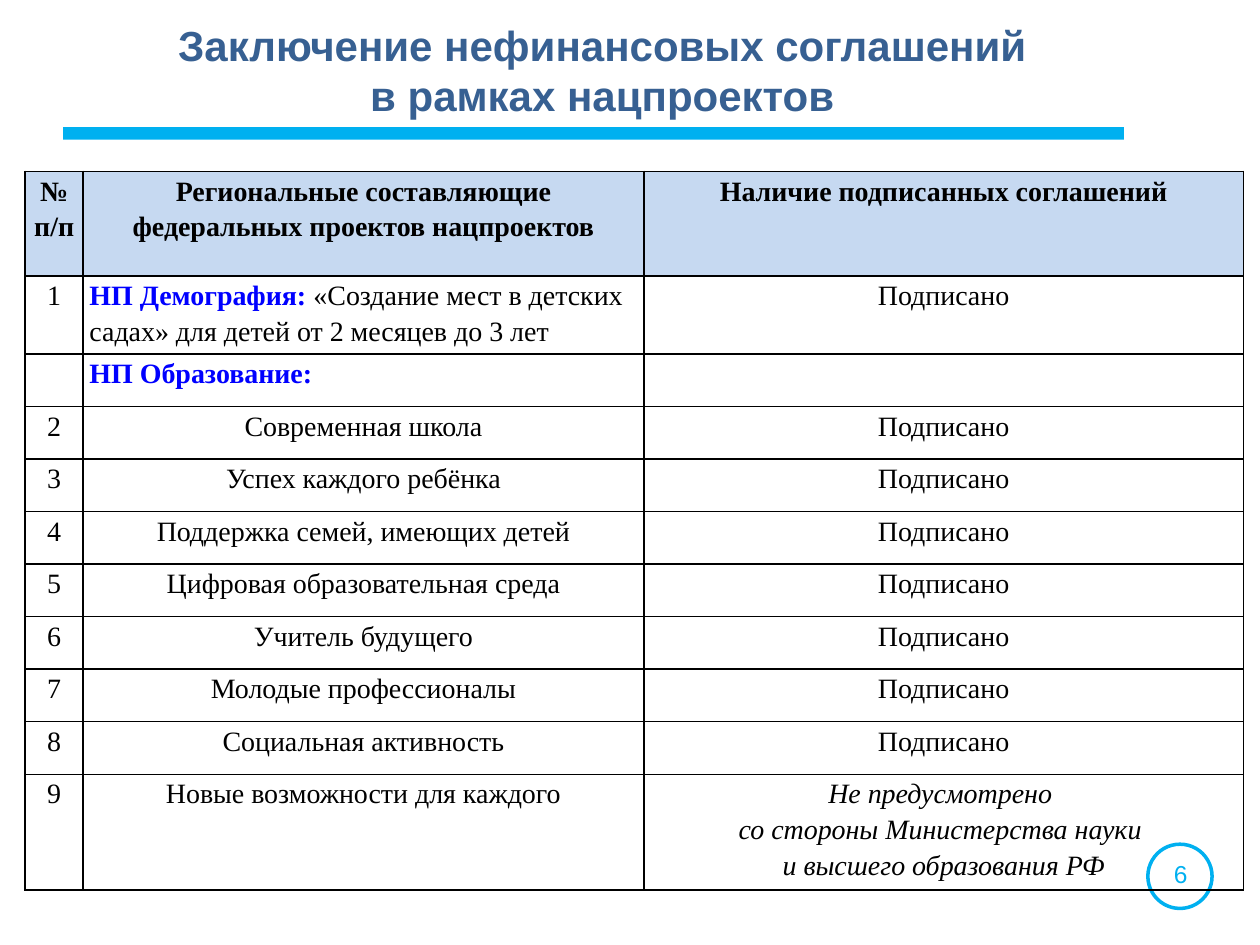
from dataclasses import dataclass
from typing import NamedTuple

from lxml.etree import SubElement
from pptx import Presentation
from pptx.dml.color import RGBColor
from pptx.enum.shapes import MSO_SHAPE
from pptx.enum.text import MSO_ANCHOR, MSO_AUTO_SIZE, PP_ALIGN
from pptx.oxml.ns import qn
from pptx.util import Inches, Pt

GRID_COLUMNS, GRID_ROWS = 100, 75
WIDTH, HEIGHT = Inches(10), Inches(7.5)


@dataclass(frozen=True)
class Theme:
    accent: str = "00B0F0"
    title: str = "376092"
    project: str = "0000FF"
    text: str = "000000"
    header: str = "C6D9F1"
    heading_font: str = "Arial"
    table_font: str = "Times New Roman"
    title_size: float = 24
    table_size: float = 16
    number_size: float = 14


class Box(NamedTuple):
    column: float
    row: float
    columns: float
    rows: float


class Run(NamedTuple):
    text: str
    color: str
    bold: bool = False
    italic: bool = False


class Cell(NamedTuple):
    lines: list
    align: PP_ALIGN = PP_ALIGN.CENTER


THEME = Theme()


def across(columns: float) -> int:
    return round(WIDTH * columns / GRID_COLUMNS)


def down(rows: float) -> int:
    return round(HEIGHT * rows / GRID_ROWS)


def place(box: Box) -> tuple:
    return across(box.column), down(box.row), across(box.columns), down(box.rows)


def write(tf, lines: list, *, font: str, size: float,
          align=PP_ALIGN.CENTER, spacing: float = 1.0) -> None:
    tf.word_wrap = True
    for i, runs in enumerate(lines):
        p = tf.add_paragraph() if i else tf.paragraphs[0]
        p.alignment, p.line_spacing = align, spacing
        p.font.size = Pt(size)
        for run in runs:
            r = p.add_run()
            r.text = run.text
            r.font.name, r.font.size = font, Pt(size)
            r.font.bold, r.font.italic = run.bold, run.italic
            r.font.color.rgb = RGBColor.from_string(run.color)


def plain(*lines: str, bold: bool = False, italic: bool = False) -> Cell:
    return Cell([[Run(line, THEME.text, bold, italic)] for line in lines])


def project(name: str, detail: str = "") -> Cell:
    runs = [Run(name, THEME.project, bold=True)]
    if detail:
        runs.append(Run(detail, THEME.text))
    return Cell([runs], PP_ALIGN.LEFT)


def add_accent(s, shape: MSO_SHAPE, box: Box, *, filled: bool) -> None:
    sp = s.shapes.add_shape(shape, *place(box))
    sp.shadow.inherit = False
    color = RGBColor.from_string(THEME.accent)
    if filled:
        sp.fill.solid()
        sp.fill.fore_color.rgb = color
        sp.line.fill.background()
    else:
        sp.fill.background()
        sp.line.color.rgb = color
        sp.line.width = Pt(2)


def add_borders(cell) -> None:
    tc_pr = cell._tc.get_or_add_tcPr()
    for side in ("a:lnL", "a:lnR", "a:lnT", "a:lnB"):
        ln = SubElement(tc_pr, qn(side), w=str(Pt(1)))
        fill = SubElement(ln, qn("a:solidFill"))
        SubElement(fill, qn("a:srgbClr"), val=THEME.text)


def add_grid_table(s, left: float, top: float, columns: list, rows: list,
                   content: list) -> None:
    box = Box(left, top, sum(columns), sum(rows))
    table = s.shapes.add_table(len(rows), len(columns), *place(box)).table
    table.first_row = table.horz_banding = False
    for column, width in zip(table.columns, columns):
        column.width = across(width)
    for i, (row, height, cells) in enumerate(zip(table.rows, rows, content)):
        row.height = down(height)
        for cell, item in zip(row.cells, cells):
            cell.margin_left = cell.margin_right = across(0.5)
            cell.margin_top = cell.margin_bottom = 0
            add_borders(cell)
            if i:
                cell.fill.background()
            else:
                cell.fill.solid()
                cell.fill.fore_color.rgb = RGBColor.from_string(THEME.header)
            write(cell.text_frame, item.lines, font=THEME.table_font,
                  size=THEME.table_size, align=item.align, spacing=1.15)


def agreements() -> list:
    signed = plain("Подписано")
    empty = Cell([[]])
    names = ["Современная школа", "Успех каждого ребёнка",
             "Поддержка семей, имеющих детей", "Цифровая образовательная среда",
             "Учитель будущего", "Молодые профессионалы",
             "Социальная активность", "Новые возможности для каждого"]
    not_planned = plain("Не предусмотрено ", "со стороны Министерства науки ",
                        "и высшего образования РФ", italic=True)
    statuses = [signed] * (len(names) - 1) + [not_planned]
    header = [plain(text, bold=True) for text in (
        "№ п/п", "Региональные составляющие федеральных проектов нацпроектов",
        "Наличие подписанных соглашений")]
    demography = project("НП Демография: ",
                         "«Создание мест в детских садах» для детей от 2 месяцев до 3 лет")
    numbered = [[plain(str(n)), plain(name), status]
                for n, (name, status) in enumerate(zip(names, statuses), 2)]
    return [header, [plain("1"), demography, signed],
            [empty, project("НП Образование:"), empty], *numbered]


def main() -> None:
    prs = Presentation()
    prs.slide_width, prs.slide_height = WIDTH, HEIGHT
    s = prs.slides.add_slide(prs.slide_layouts[5])

    add_accent(s, MSO_SHAPE.RECTANGLE, Box(5, 10.1, 84.2, 1), filled=True)
    add_accent(s, MSO_SHAPE.OVAL, Box(91.1, 67, 5.1, 5.1), filled=False)
    number = s.shapes.add_textbox(*place(Box(90.8, 67.7, 5.8, 3.4)))
    write(number.text_frame, [[Run("6", THEME.accent)]],
          font=THEME.heading_font, size=THEME.number_size)

    title = s.shapes.title
    title.left, title.top, title.width, title.height = place(Box(5, 1.2, 85.6, 8.7))
    title.text_frame.auto_size = MSO_AUTO_SIZE.NONE
    title.text_frame.vertical_anchor = MSO_ANCHOR.MIDDLE
    write(title.text_frame,
          [[Run(line, THEME.title, bold=True)] for line in
           ("Заключение нефинансовых соглашений", "в рамках нацпроектов")],
          font=THEME.heading_font, size=THEME.title_size)

    add_grid_table(s, 2, 13.6, [4.6, 44.5, 47.6],
                   [8.3, 6.2, *[4.17] * 8, 9.2], agreements())
    prs.save("out.pptx")


if __name__ == "__main__":
    main()
